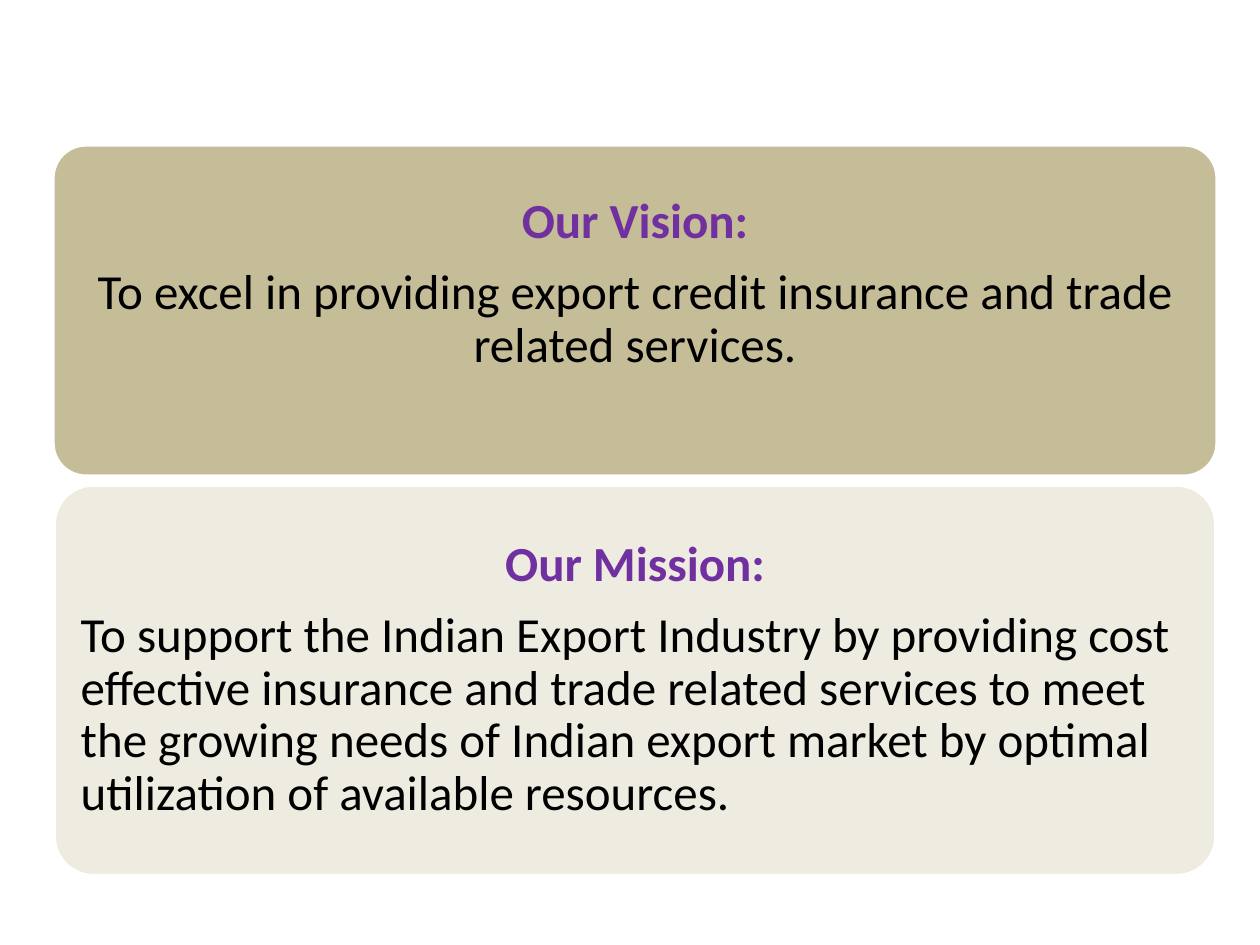
from pptx import Presentation
from pptx.dml.color import RGBColor
from pptx.enum.shapes import MSO_SHAPE
from pptx.enum.text import MSO_ANCHOR, PP_ALIGN
from pptx.util import Inches, Pt

TAN = RGBColor(0xC4, 0xBD, 0x97)
CREAM = RGBColor(0xEE, 0xEC, 0xE1)
PURPLE = RGBColor(0x70, 0x30, 0xA0)
BLACK = RGBColor(0, 0, 0)
WHITE = RGBColor(0xFF, 0xFF, 0xFF)


class Deck:
    font = "Calibri"
    size = Pt(28)
    inset = Inches(0.12)

    def __init__(self):
        self.prs = Presentation()
        self.prs.slide_width = Inches(10)
        self.prs.slide_height = Inches(7.5)
        self.s = self.prs.slides.add_slide(self.prs.slide_layouts[6])

    def paragraph(self, p, text, color, align, bold=False):
        p.text = text
        p.alignment = align
        p.line_spacing = 0.9
        p.font.name = self.font
        p.font.size = self.size
        p.font.bold = bold
        p.font.color.rgb = color

    def panel(self, left, top, width, height, fill, heading, body, align,
              bottom=inset):
        sp = self.s.shapes.add_shape(
            MSO_SHAPE.ROUNDED_RECTANGLE,
            Inches(left), Inches(top), Inches(width), Inches(height))
        sp.adjustments[0] = 0.1
        sp.shadow.inherit = False
        sp.fill.solid()
        sp.fill.fore_color.rgb = fill
        sp.line.color.rgb = WHITE
        sp.line.width = Pt(2)
        tf = sp.text_frame
        tf.word_wrap = True
        tf.vertical_anchor = MSO_ANCHOR.MIDDLE
        tf.margin_left = tf.margin_right = tf.margin_top = self.inset
        tf.margin_bottom = bottom
        self.paragraph(tf.paragraphs[0], heading, PURPLE, PP_ALIGN.CENTER, True)
        p = tf.add_paragraph()
        self.paragraph(p, body, BLACK, align)
        p.space_before = Pt(10)


def main():
    deck = Deck()
    deck.panel(
        0.42, 1.15, 9.24, 2.63, TAN, "Our Vision:",
        "To excel in providing export credit insurance and trade related "
        "services.",
        PP_ALIGN.CENTER, bottom=Inches(0.53))
    deck.panel(
        0.43, 3.85, 9.22, 3.1, CREAM, "Our Mission:",
        "To support the Indian Export Industry by providing cost effective "
        "insurance and trade related services to meet the growing needs of "
        "Indian export market by optimal utilization of available resources.",
        PP_ALIGN.LEFT)
    deck.prs.save("out.pptx")


if __name__ == "__main__":
    main()
